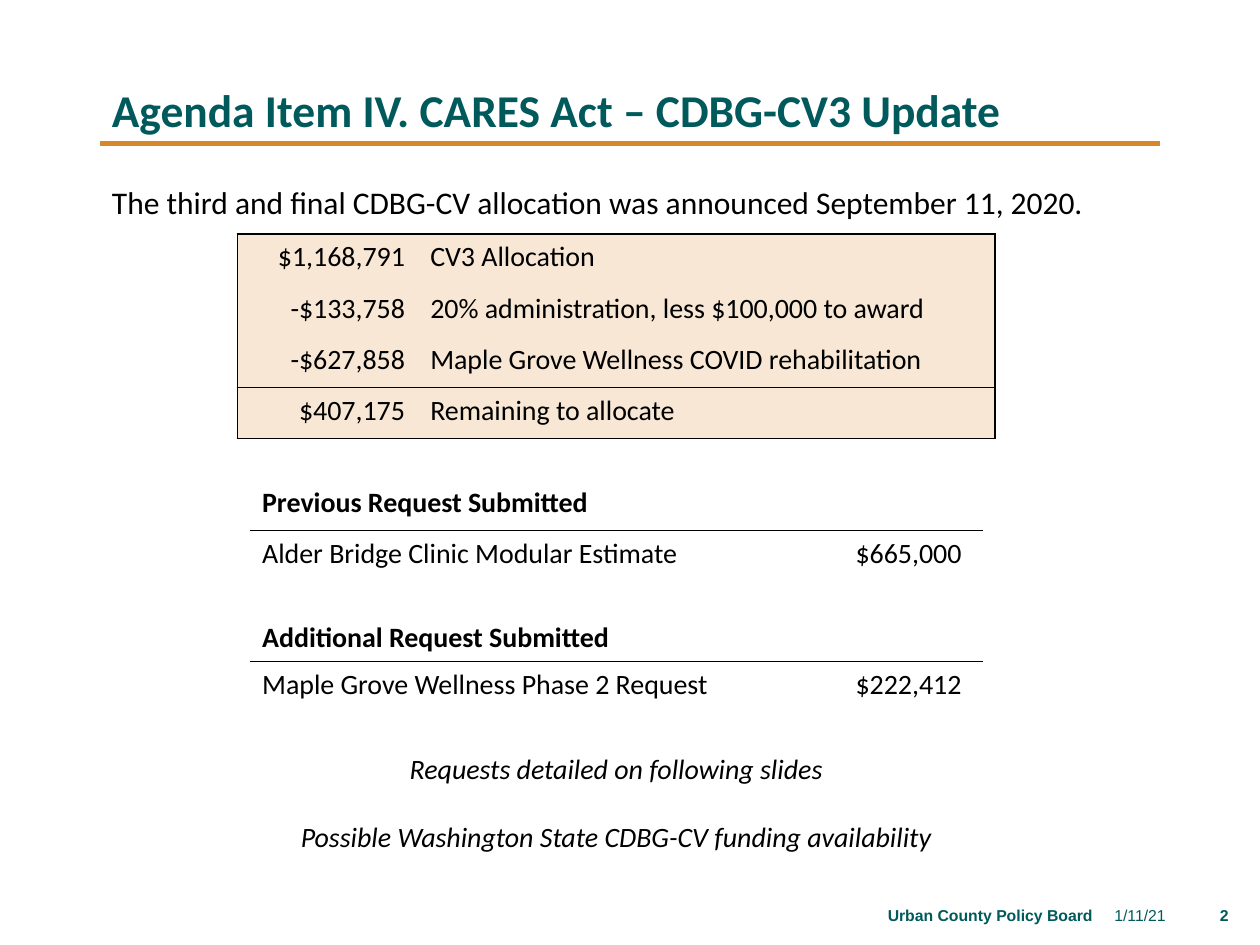
from lxml import etree
from pptx import Presentation
from pptx.dml.color import RGBColor
from pptx.enum import shapes, text
from pptx.oxml.ns import qn
from pptx.util import Pt

COLORS = {"teal": "00595B", "footer": "005A5B", "orange": "D8872A",
          "black": "000000", "peach": "F7E7D4"}
LEFT, RIGHT, CENTER = text.PP_ALIGN.LEFT, text.PP_ALIGN.RIGHT, text.PP_ALIGN.CENTER
TOP, MIDDLE, BOTTOM = text.MSO_ANCHOR.TOP, text.MSO_ANCHOR.MIDDLE, text.MSO_ANCHOR.BOTTOM

# Content
TITLE = "Agenda Item IV. CARES Act – CDBG-CV3 Update"
INTRO = "The third and final CDBG-CV allocation was announced September 11, 2020."
BUDGET = [
    ("$1,168,791", "CV3 Allocation"),
    ("-$133,758", "20% administration, less $100,000 to award"),
    ("-$627,858", "Maple Grove Wellness COVID rehabilitation"),
    ("$407,175", "Remaining to allocate"),
]
REQUESTS = [
    ("Previous Request Submitted", ""),
    ("Alder Bridge Clinic Modular Estimate", "$665,000"),
    ("Additional Request Submitted", ""),
    ("Maple Grove Wellness Phase 2 Request", "$222,412"),
]
NOTES = ["Requests detailed on following slides",
         "Possible Washington State CDBG-CV funding availability"]
FOOTER = [  # text, left, width, bold
    ("Urban County Policy Board", 180, 451.4, True),
    ("1/11/21", 616.3, 56.9, False),
    ("2", 675.4, 33.8, True),
]
MARGIN, CONTENT_WIDTH = 56.9, 606.2
ROW, LINE = 29.2, 19.5


def style(para, size, color="black", bold=False, italic=False, font="Calibri", align=LEFT):
    para.alignment = align
    for span in para.runs:
        span.font.name, span.font.size = font, Pt(size)
        span.font.bold, span.font.italic = bold, italic
        span.font.color.rgb = RGBColor.from_string(COLORS[color])


def add_text(page, words, left, top, width, height, size, anchor=TOP, spacing=None, **look):
    box = page.shapes.add_textbox(Pt(left), Pt(top), Pt(width), Pt(height))
    frame = box.text_frame
    frame.word_wrap, frame.vertical_anchor = True, anchor
    frame.text = words
    para = frame.paragraphs[0]
    if spacing:
        para.line_spacing = spacing
    style(para, size, **look)


def set_borders(cell, sides):
    """Draw 1 pt black lines on the named sides and clear the others."""
    properties = cell._tc.get_or_add_tcPr()
    for side in "LRTB":
        line = etree.SubElement(properties, qn(f"a:ln{side}"), w=str(Pt(1)))
        if side in sides:
            fill = etree.SubElement(line, qn("a:solidFill"))
            etree.SubElement(fill, qn("a:srgbClr"), val=COLORS["black"])
        else:
            etree.SubElement(line, qn("a:noFill"))


def add_table(page, left, top, widths, heights):
    frame = page.shapes.add_table(len(heights), len(widths), Pt(left), Pt(top),
                                  Pt(sum(widths)), Pt(sum(heights)))
    table = frame.table
    table.first_row = table.horz_banding = False
    for column, width in zip(table.columns, widths):
        column.width = Pt(width)
    for row, height in zip(table.rows, heights):
        row.height = Pt(height)
    return table


def fill_cell(cell, words, sides, color=None, anchor=TOP, **look):
    cell.text = words
    cell.vertical_anchor = anchor
    style(cell.text_frame.paragraphs[0], 16, **look)
    set_borders(cell, sides)
    if color:
        cell.fill.solid()
        cell.fill.fore_color.rgb = RGBColor.from_string(COLORS[color])
    else:
        cell.fill.background()


deck = Presentation()
deck.slide_width, deck.slide_height = Pt(720), Pt(540)
page = deck.slides.add_slide(deck.slide_layouts[6])

# Title, rule and introduction
rule = page.shapes.add_connector(shapes.MSO_CONNECTOR.STRAIGHT, Pt(MARGIN), Pt(82),
                                 Pt(MARGIN + CONTENT_WIDTH), Pt(82))
rule.line.color.rgb = RGBColor.from_string(COLORS["orange"])
rule.line.width = Pt(3)
etree.SubElement(rule._element.spPr, qn("a:effectLst"))
add_text(page, TITLE, MARGIN, 28.5, CONTENT_WIDTH, 53.3, 26, BOTTOM, 0.9,
         color="teal", bold=True)
add_text(page, INTRO, MARGIN, 97.9, 618.5, 31, 18, spacing=1.15)

# Budget: outlined, with a line above the total
budget = add_table(page, 135.7, 133.7, [103, 329.8], [ROW] * len(BUDGET))
last = len(BUDGET) - 1
for i, row in enumerate(BUDGET):
    across = ("T" if i in (0, last) else "") + ("B" if i >= last - 1 else "")
    for j, (words, align) in enumerate(zip(row, (RIGHT, LEFT))):
        fill_cell(budget.cell(i, j), words, "LR"[j] + across, "peach", align=align)

# Requests: bold headings underlined, closing notes merged across
heights = [ROW, ROW, ROW + 16.5, ROW, 4 * LINE + 7.2]
requests = add_table(page, 142.6, 273.9, [339.1, 79.9], heights)
for i, row in enumerate(REQUESTS):
    heading = i % 2 == 0
    for j, words in enumerate(row):
        fill_cell(requests.cell(i, j), words, "B" if heading else "T",
                  anchor=BOTTOM if i == 2 else TOP, bold=heading)
notes = requests.cell(len(REQUESTS), 0)
notes.merge(requests.cell(len(REQUESTS), 1))
fill_cell(notes, "\n".join(NOTES), "", anchor=BOTTOM)
for i, para in enumerate(notes.text_frame.paragraphs):
    style(para, 16, italic=True, align=CENTER)
    if i:
        para.space_before = Pt(LINE)

# Footer
for words, left, width, bold in FOOTER:
    add_text(page, words, left, 508.6, width, 28.8, 9, MIDDLE,
             color="footer", bold=bold, font="Arial", align=RIGHT)

deck.save("out.pptx")
